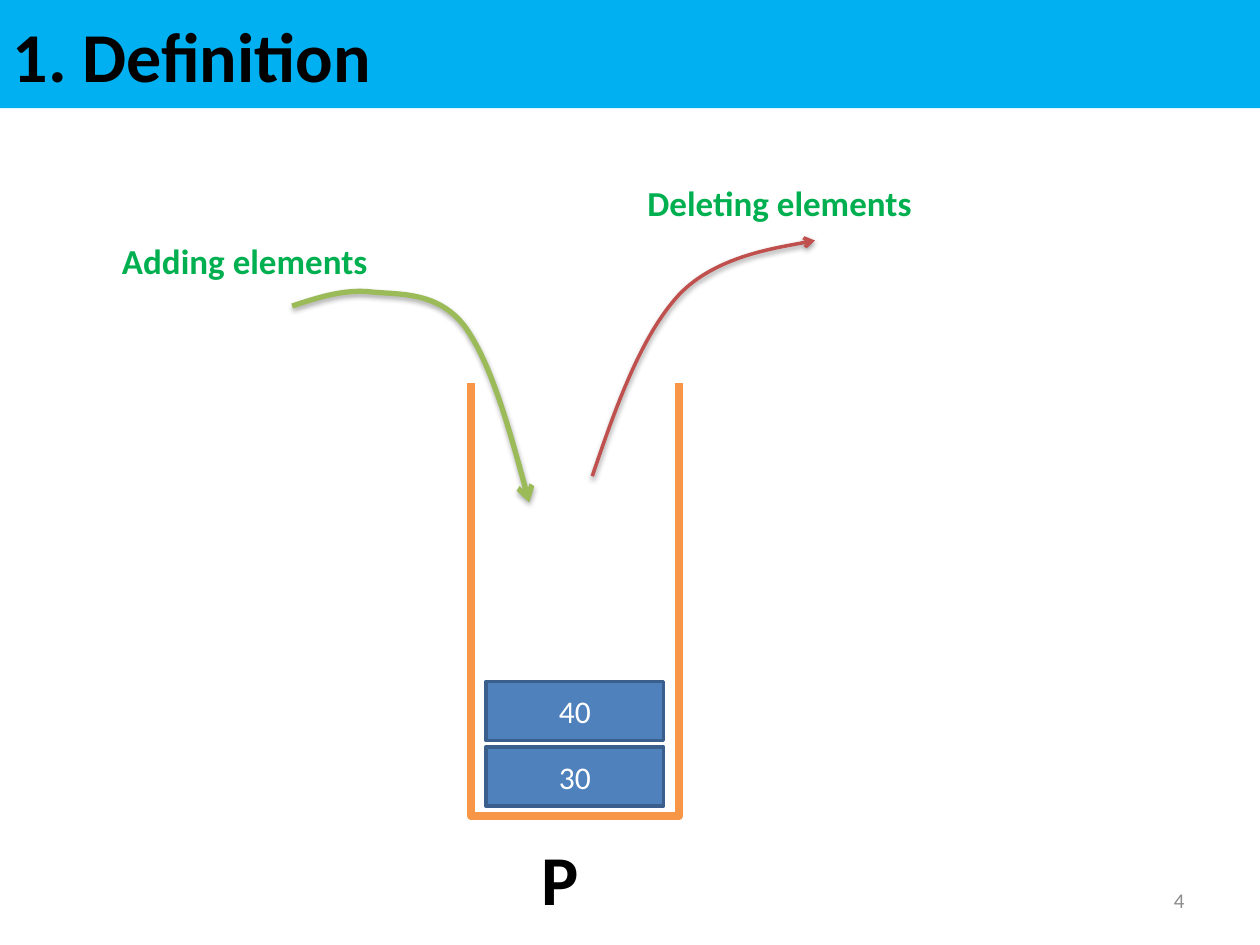
from dataclasses import dataclass
from typing import Optional

from lxml.etree import SubElement
from pptx import Presentation
from pptx.dml.color import RGBColor
from pptx.enum.shapes import MSO_SHAPE
from pptx.enum.text import MSO_ANCHOR, MSO_AUTO_SIZE, PP_ALIGN
from pptx.oxml.ns import qn
from pptx.util import Cm, Pt


@dataclass
class Area:
    left: float
    top: float
    width: float
    height: float

    def lengths(self) -> list:
        return [Cm(value) for value in (self.left, self.top, self.width, self.height)]


@dataclass
class Label:
    text: str
    area: Area
    size: float
    color: str
    bold: bool = True
    align: PP_ALIGN = PP_ALIGN.LEFT
    anchor: MSO_ANCHOR = MSO_ANCHOR.TOP
    wrap: bool = True


@dataclass
class Curve:
    points: list
    color: str
    width: float
    shadow_opacity: int
    shadow_distance: float


def color_of(value: str) -> RGBColor:
    return RGBColor.from_string(value)


def write_text(shape, label: Label) -> None:
    frame = shape.text_frame
    frame_format = {
        "auto_size": MSO_AUTO_SIZE.NONE,
        "word_wrap": label.wrap,
        "vertical_anchor": label.anchor,
    }
    for name, value in frame_format.items():
        setattr(frame, name, value)
    para = frame.paragraphs[0]
    para.alignment = label.align
    span = para.add_run()
    span.text = label.text
    font_format = {"name": "Calibri", "size": Pt(label.size), "bold": label.bold}
    for name, value in font_format.items():
        setattr(span.font, name, value)
    span.font.color.rgb = color_of(label.color)


def add_label(page, label: Label) -> None:
    write_text(page.shapes.add_textbox(*label.area.lengths()), label)


def add_box(page, area: Area, fill: str, line: Optional[str] = None, width: float = 0):
    box = page.shapes.add_shape(MSO_SHAPE.RECTANGLE, *area.lengths())
    box.shadow.inherit = False
    box.fill.solid()
    box.fill.fore_color.rgb = color_of(fill)
    if line:
        box.line.color.rgb = color_of(line)
        box.line.width = Pt(width)
    else:
        box.line.fill.background()
    return box


def add_curve(page, curve: Curve) -> None:
    start, *others = [(Cm(x), Cm(y)) for x, y in curve.points]
    builder = page.shapes.build_freeform(*start, scale=1.0)
    builder.add_line_segments(others, close=False)
    shape = builder.convert_to_shape()
    shape.fill.background()
    shape.line.color.rgb = color_of(curve.color)
    shape.line.width = Pt(curve.width)
    shape.shadow.inherit = False

    outline = next(shape.element.iter(qn("a:path")))
    segments = outline.findall(qn("a:lnTo"))
    for first in range(0, len(segments), 3):
        bend = SubElement(outline, qn("a:cubicBezTo"))
        for segment in segments[first:first + 3]:
            bend.append(segment[0])
            outline.remove(segment)

    properties = shape.element.spPr
    SubElement(properties.find(qn("a:ln")), qn("a:tailEnd"), type="arrow")
    shadow = SubElement(
        properties.find(qn("a:effectLst")), qn("a:outerShdw"),
        blurRad=str(Pt(3.1)), dist=str(Pt(curve.shadow_distance)),
        dir="5400000", rotWithShape="0",
    )
    tint = SubElement(shadow, qn("a:srgbClr"), val="000000")
    SubElement(tint, qn("a:alpha"), val=str(curve.shadow_opacity * 1000))


def add_title(page, label: Label) -> None:
    title = page.shapes.title
    for name, value in zip(("left", "top", "width", "height"), label.area.lengths()):
        setattr(title, name, value)
    title.fill.solid()
    title.fill.fore_color.rgb = color_of("00B0F0")
    write_text(title, label)
    properties = title.text_frame.paragraphs[0]._p.get_or_add_pPr()
    for name, value in {"marL": Cm(2.06), "indent": -Cm(2.06)}.items():
        properties.set(name, str(value))


def add_stack(page, values: list) -> None:
    add_box(page, Area(9.5, 7.52, 4.19, 8.94), "FFFFFF", "F79646", 4.5)
    add_box(page, Area(8.51, 6.73, 5.59, 0.99), "FFFFFF")
    for level, value in enumerate(values):
        area = Area(9.8, 15.06 - 1.32 * level, 3.58, 1.19)
        box = add_box(page, area, "4F81BD", "3A5F8C", 2)
        write_text(box, Label(value, area, 18, "FFFFFF", False,
                              PP_ALIGN.CENTER, MSO_ANCHOR.MIDDLE))


LABELS = [
    Label("4", Area(18.2, 17.65, 5.93, 1.01), 12, "8C8C8C", False,
          PP_ALIGN.RIGHT, MSO_ANCHOR.MIDDLE),
    Label("P", Area(10.67, 16.71, 1.27, 1.96), 40, "000000", wrap=False),
    Label("Adding elements", Area(2.21, 4.7, 7.29, 1.11), 20, "00B050"),
    Label("Deleting elements", Area(12.8, 3.53, 10.31, 1.11), 20, "00B050"),
]
CURVES = [
    Curve([(5.89, 6.17), (6.43, 5.99), (6.96, 5.82), (7.52, 5.89),
           (8.1, 5.94), (8.84, 5.89), (9.37, 6.58),
           (9.88, 7.29), (10.29, 8.71), (10.67, 10.13)], "9BBB59", 3, 35, 1.8),
    Curve([(11.94, 9.6), (12.42, 8.18), (12.93, 6.76), (13.69, 5.94),
           (14.43, 5.16), (16.43, 4.85), (16.43, 4.85)], "C0504D", 2, 38, 1.6),
]


def main() -> None:
    deck = Presentation()
    deck.slide_width, deck.slide_height = Cm(25.4), Cm(19.05)
    page = deck.slides.add_slide(deck.slide_layouts[5])
    add_title(page, Label("1. Definition", Area(0, 0, 25.4, 2.18), 40, "000000",
                          anchor=MSO_ANCHOR.MIDDLE))
    add_stack(page, ["30", "40"])
    for curve in CURVES:
        add_curve(page, curve)
    for label in LABELS:
        add_label(page, label)
    deck.save("out.pptx")


if __name__ == "__main__":
    main()
